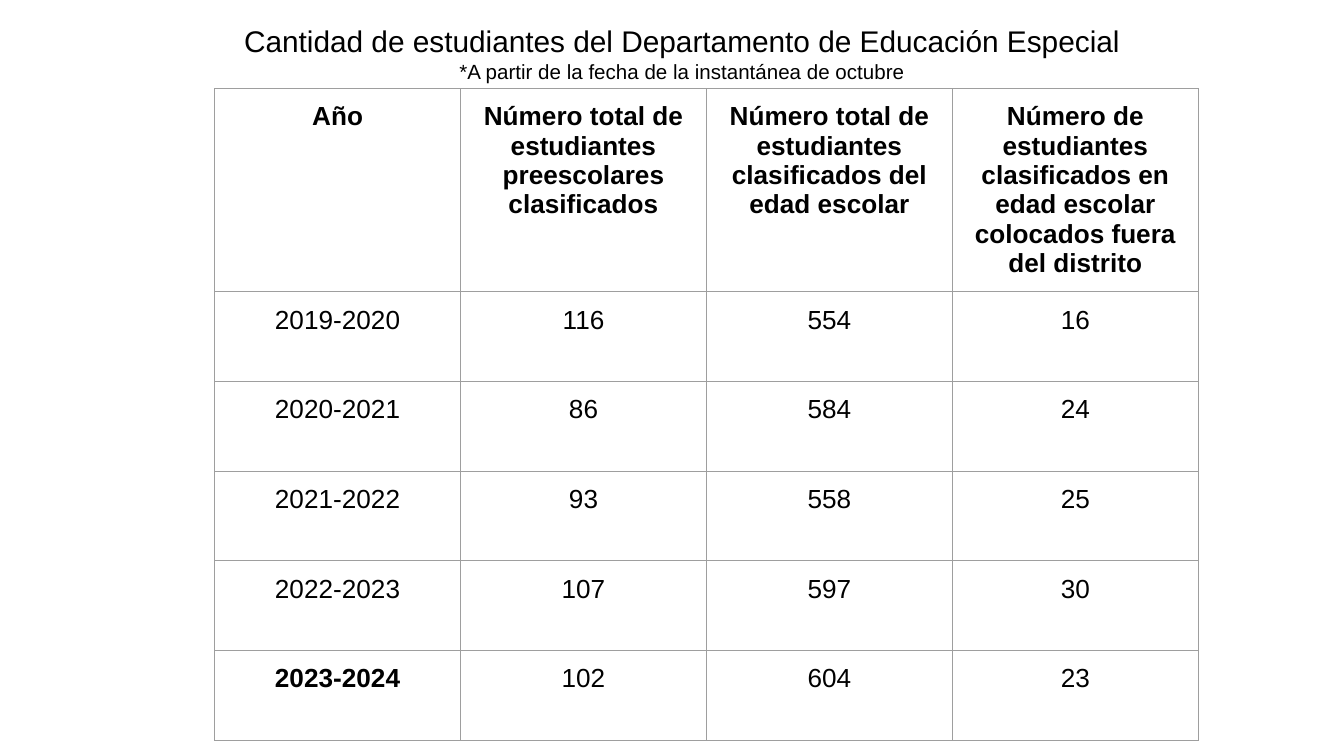
from dataclasses import dataclass

from lxml.etree import SubElement
from pptx import Presentation
from pptx.dml.color import RGBColor
from pptx.enum.text import MSO_AUTO_SIZE as AutoSize, PP_ALIGN as Align
from pptx.oxml.ns import qn
from pptx.util import Inches, Pt


@dataclass(frozen=True)
class Theme:
    font: str = "Arial"
    ink: str = "000000"
    rule: str = "9E9E9E"
    rule_width: float = 0.75
    title_size: int = 16
    note_size: int = 11
    table_size: int = 14
    inset: float = 0.1


@dataclass(frozen=True)
class Area:
    left: float
    top: float
    width: float
    height: float

    def on(self, deck) -> tuple[int, int, int, int]:
        wide, high = deck.slide_width, deck.slide_height
        return (
            percent(self.left, wide),
            percent(self.top, high),
            percent(self.width, wide),
            percent(self.height, high),
        )


@dataclass(frozen=True)
class YearCount:
    year: str
    preschool: int
    school_age: int
    out_of_district: int
    bold_year: bool = False

    def texts(self) -> tuple[str, ...]:
        counts = (self.preschool, self.school_age, self.out_of_district)
        return (self.year, *map(str, counts))


THEME = Theme()
TITLE_AREA = Area(10.41, 1.24, 80.7, 11.56)
TABLE_AREA = Area(15.97, 11.73, 73.2, 87.82)
HEADER_HEIGHT = 18.67
YEAR_HEIGHT = 11.87

TITLE = "Cantidad de estudiantes del Departamento de Educación Especial"
NOTE = "*A partir de la fecha de la instantánea de octubre"
HEADERS = (
    "Año",
    "Número total de estudiantes preescolares clasificados",
    "Número total de estudiantes clasificados del edad escolar",
    "Número de estudiantes clasificados en edad escolar colocados fuera del distrito",
)
YEARS = (
    YearCount("2019-2020", 116, 554, 16),
    YearCount("2020-2021", 86, 584, 24),
    YearCount("2021-2022", 93, 558, 25),
    YearCount("2022-2023", 107, 597, 30),
    YearCount("2023-2024", 102, 604, 23, bold_year=True),
)


def percent(share: float, whole: int) -> int:
    return round(share * whole / 100)


def write(para, text: str, size: int, bold: bool = False) -> None:
    para.text = text
    para.alignment = Align.CENTER
    para.font.name = THEME.font
    para.font.size = Pt(size)
    para.font.bold = bold
    para.font.color.rgb = RGBColor.from_string(THEME.ink)


def set_insets(holder) -> None:
    holder.margin_left = holder.margin_right = Inches(THEME.inset)
    holder.margin_top = holder.margin_bottom = Inches(THEME.inset)


def outline(cell) -> None:
    properties = cell._tc.get_or_add_tcPr()
    for side in ("a:lnL", "a:lnR", "a:lnT", "a:lnB"):
        line = SubElement(properties, qn(side), w=str(Pt(THEME.rule_width)))
        fill = SubElement(line, qn("a:solidFill"))
        SubElement(fill, qn("a:srgbClr"), val=THEME.rule)


def fill_cell(cell, text: str, bold: bool) -> None:
    set_insets(cell)
    outline(cell)
    cell.fill.background()
    write(cell.text_frame.paragraphs[0], text, THEME.table_size, bold)


def draw_table(deck, page) -> None:
    area = TABLE_AREA.on(deck)
    frame = page.shapes.add_table(len(YEARS) + 1, len(HEADERS), *area)
    table = frame.table
    table.first_row = table.horz_banding = False
    for index, row in enumerate(table.rows):
        share = YEAR_HEIGHT if index else HEADER_HEIGHT
        row.height = percent(share, deck.slide_height)
    frame.height = area[3]

    for column, header in enumerate(HEADERS):
        fill_cell(table.cell(0, column), header, bold=True)
    for row, year in enumerate(YEARS, start=1):
        for column, text in enumerate(year.texts()):
            fill_cell(table.cell(row, column), text, year.bold_year and column == 0)


def draw_title(deck, page) -> None:
    box = page.shapes.add_textbox(*TITLE_AREA.on(deck))
    frame = box.text_frame
    frame.word_wrap = True
    frame.auto_size = AutoSize.SHAPE_TO_FIT_TEXT
    set_insets(frame)
    write(frame.paragraphs[0], TITLE, THEME.title_size)
    write(frame.add_paragraph(), NOTE, THEME.note_size)


def main() -> None:
    deck = Presentation()
    deck.slide_width = Inches(10)
    deck.slide_height = deck.slide_width * 9 // 16
    page = deck.slides.add_slide(deck.slide_layouts[6])
    draw_table(deck, page)
    draw_title(deck, page)
    deck.save("out.pptx")


if __name__ == "__main__":
    main()
